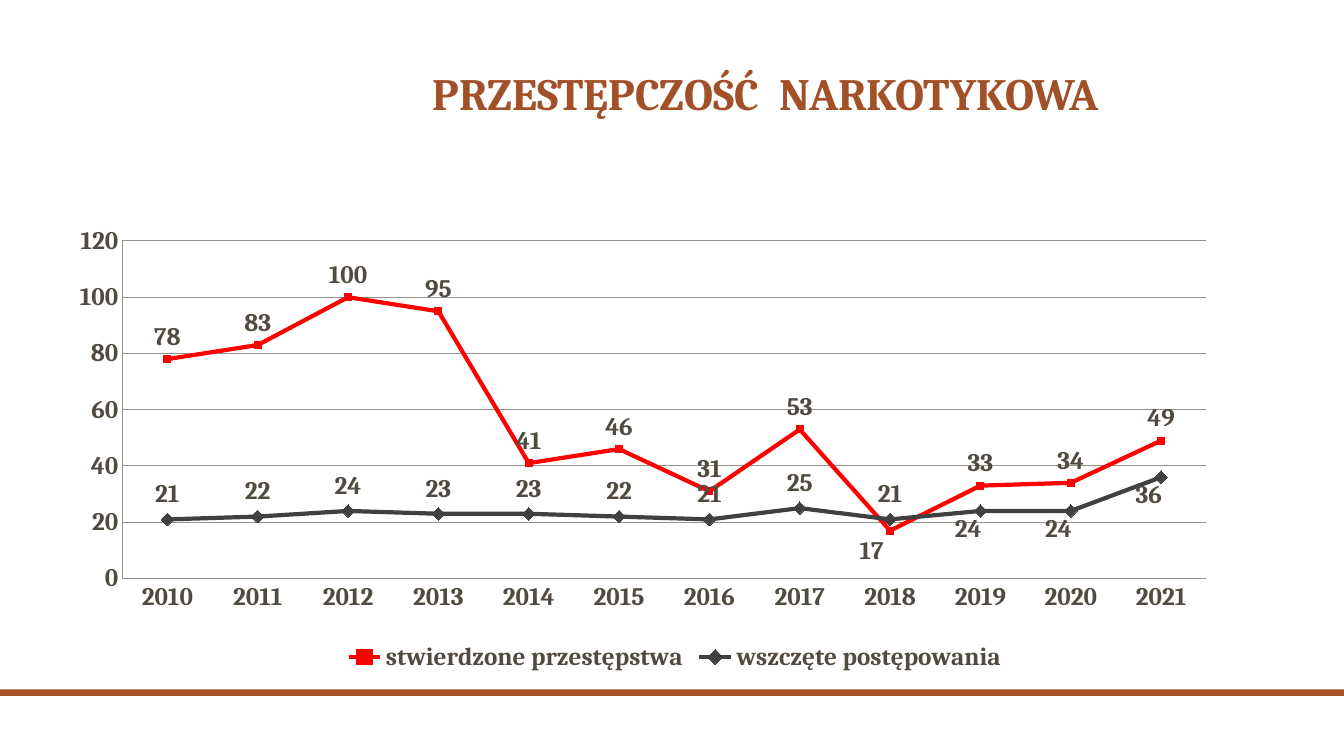
from lxml import etree
from pptx import Presentation
from pptx import util as u
from pptx.chart.data import CategoryChartData
from pptx.dml.color import RGBColor
from pptx.enum import chart as ch, shapes, text
from pptx.oxml import ns

Pt = u.Pt
FONT = "Cambria"
RUST = RGBColor(0xA1, 0x50, 0x27)
RULE = RGBColor(0xA8, 0x52, 0x29)
INK = RGBColor(0x51, 0x4A, 0x40)
GRID = RGBColor(0x96, 0x92, 0x8C)
RED = RGBColor(0xFF, 0x00, 0x00)
CHARCOAL = RGBColor(0x40, 0x40, 0x40)
BLACKISH = RGBColor(0x26, 0x26, 0x26)

SLIDE_W, SLIDE_H = 960, 540
YEARS = [str(year) for year in range(2010, 2022)]
OFFENCES = [78, 83, 100, 95, 41, 46, 31, 53, 17, 33, 34, 49]
PROCEEDINGS = [21, 22, 24, 23, 23, 22, 21, 25, 21, 24, 24, 36]
PLOT_AREA = {"x": 0.051, "y": 0.091, "w": 0.881, "h": 0.704}


def manual_layout(**settings):
    """Build a c:layout element from child names and values."""
    layout = etree.Element(ns.qn("c:layout"))
    manual = etree.SubElement(layout, ns.qn("c:manualLayout"))
    for name, value in settings.items():
        etree.SubElement(manual, ns.qn("c:" + name)).set("val", str(value))
    return layout


def style_font(font, size, color):
    font.name, font.size, font.bold = FONT, Pt(size), True
    font.color.rgb = color


def add_title(slide, left, top, width, height):
    title = slide.shapes.title
    title.left, title.top = Pt(left), Pt(top)
    title.width, title.height = Pt(width), Pt(height)
    title.text_frame.vertical_anchor = text.MSO_ANCHOR.MIDDLE
    heading = title.text_frame.paragraphs[0]
    heading.alignment = text.PP_ALIGN.CENTER
    heading.line_spacing = 0.9
    run = heading.add_run()
    run.text = "PRZESTĘPCZOŚĆ  NARKOTYKOWA"
    style_font(run.font, 32, RUST)


def add_footer_rule(slide, left, top, width, height):
    rule = slide.shapes.add_shape(
        shapes.MSO_SHAPE.RECTANGLE, Pt(left), Pt(top), Pt(width), Pt(height))
    rule.shadow.inherit = False
    rule.fill.solid()
    rule.fill.fore_color.rgb = RULE
    rule.line.fill.background()


def style_series(series, color, marker, marker_size, marker_color, lowered):
    """Format a line; lowered maps point numbers to label shifts to the left."""
    series.smooth = False
    series.format.line.color.rgb = color
    series.format.line.width = Pt(3)
    series.marker.style, series.marker.size = marker, marker_size
    series.marker.format.fill.solid()
    series.marker.format.fill.fore_color.rgb = marker_color
    series.marker.format.line.color.rgb = color

    labels = series.data_labels
    labels.show_value = True
    labels.position = ch.XL_LABEL_POSITION.ABOVE
    style_font(labels.font, 18, INK)
    for index, shift in lowered.items():
        label = series.points[index].data_label
        style_font(label.font, 18, INK)
        label.position = ch.XL_LABEL_POSITION.ABOVE
    for entry in labels._element.findall(ns.qn("c:dLbl")):
        index_tag = entry.find(ns.qn("c:idx"))
        shift = lowered[int(index_tag.get("val"))]
        index_tag.addnext(manual_layout(x=-shift, y=0.09))


def style_axes(chart):
    for axis in (chart.category_axis, chart.value_axis):
        axis.major_tick_mark = axis.minor_tick_mark = ch.XL_TICK_MARK.NONE
        axis.format.line.color.rgb = GRID
        axis.format.line.width = Pt(0.75)
        style_font(axis.tick_labels.font, 18, INK)
    values = chart.value_axis
    values.minimum_scale, values.maximum_scale, values.major_unit = 0, 120, 20
    values.tick_labels.number_format = "#,##0"
    values.tick_labels.number_format_is_linked = False
    values.has_major_gridlines = True
    values.major_gridlines.format.line.color.rgb = GRID
    values.major_gridlines.format.line.width = Pt(0.75)


def add_crime_chart(slide, left, top, width, height):
    data = CategoryChartData()
    data.categories = YEARS
    data.add_series("stwierdzone przestępstwa", OFFENCES)
    data.add_series("wszczęte postępowania", PROCEEDINGS)
    chart = slide.shapes.add_chart(
        ch.XL_CHART_TYPE.LINE_MARKERS,
        Pt(left), Pt(top), Pt(width), Pt(height), data).chart
    chart.has_title = False
    style_font(chart.font, 18, INK)
    chart.plots[0].vary_by_categories = False

    offences, proceedings = chart.plots[0].series
    style_series(offences, RED, ch.XL_MARKER_STYLE.SQUARE, 5, RED, {8: 0.015})
    style_series(proceedings, CHARCOAL, ch.XL_MARKER_STYLE.DIAMOND, 9, BLACKISH,
                 {9: 0.01, 10: 0.01, 11: 0.01})
    style_axes(chart)

    chart.has_legend = True
    chart.legend.position = ch.XL_LEGEND_POSITION.BOTTOM
    chart.legend.include_in_layout = False
    style_font(chart.legend.font, 18, INK)

    plot_area = chart._chartSpace.chart.plotArea
    for automatic in plot_area.findall(ns.qn("c:layout")):
        plot_area.remove(automatic)
    plot_area.insert(0, manual_layout(
        layoutTarget="inner", xMode="edge", yMode="edge", **PLOT_AREA))


def main():
    deck = Presentation()
    deck.slide_width, deck.slide_height = Pt(SLIDE_W), Pt(SLIDE_H)
    slide = deck.slides.add_slide(deck.slide_layouts.get_by_name("Title Only"))
    add_footer_rule(slide, 0, 492.5, SLIDE_W, 4.5)
    add_title(slide, 183, 29, 728.5, 79)
    add_crime_chart(slide, 42.5, 141, 879, 342.5)
    deck.save("out.pptx")


if __name__ == "__main__":
    main()
